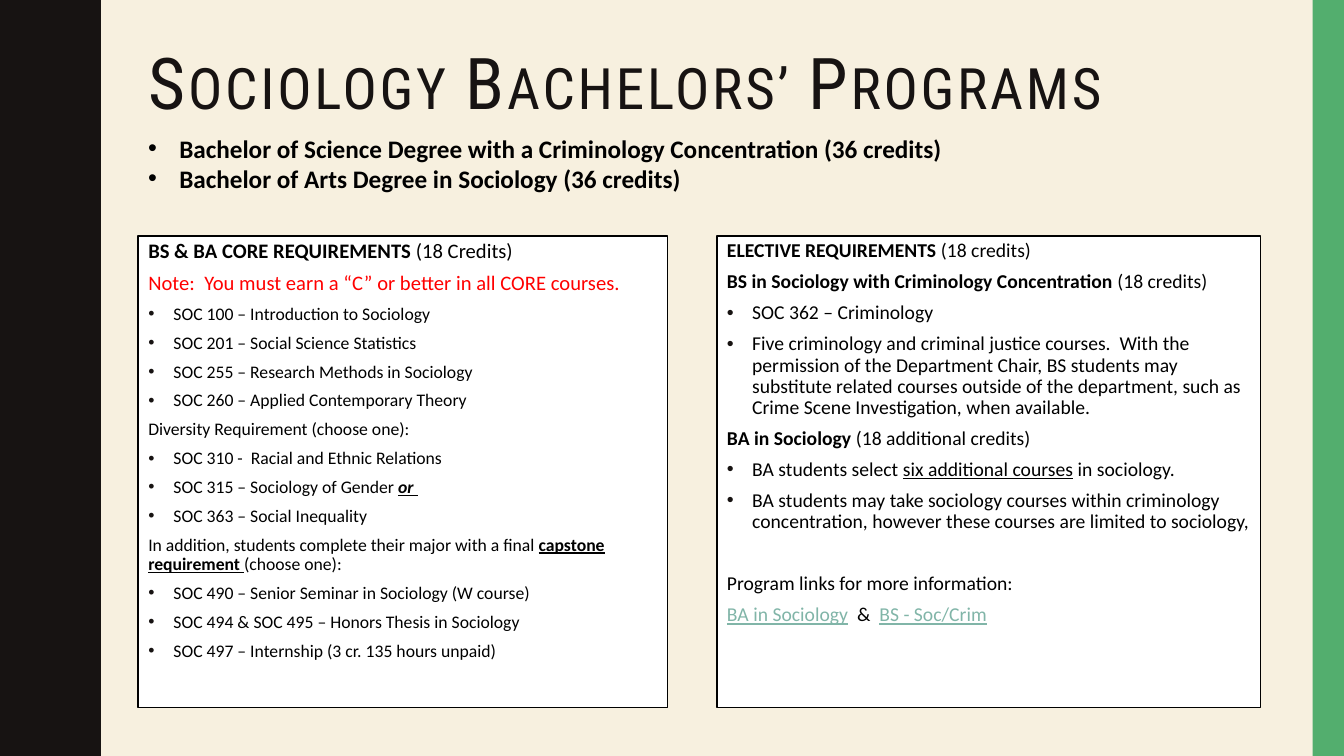
import pptx
import pptx.dml.color
import pptx.enum.text
import pptx.oxml.ns
import pptx.util
from lxml import etree

RGBColor = pptx.dml.color.RGBColor
CREAM = RGBColor(0xF7, 0xF0, 0xDF)
INK = RGBColor(0x17, 0x13, 0x12)
GREEN = RGBColor(0x53, 0xAE, 0x6E)
BLACK = RGBColor(0, 0, 0)
WHITE = RGBColor(0xFF, 0xFF, 0xFF)
RED = RGBColor(0xFF, 0, 0)
TEAL = RGBColor(0x81, 0xB5, 0xA8)

WIDTH, HEIGHT = pptx.util.Inches(13.33), pptx.util.Inches(7.5)

# Boxes as left, top, width, height in percent of the slide
TITLE_BOX = (10.28, 5.6, 83.5, 13.33)
DEGREES_BOX = (10.28, 16.93, 80.35, 9.47)
CORE_BOX = (10.28, 31.2, 39.38, 62.4)
ELECTIVE_BOX = (53.34, 31.2, 40.44, 62.4)
STRIPE_BOX = (97.67, 0, 2.33, 100)

# Half a wave in inches: x and y from trough to crest
HALF_WAVE = [(0.78, 0), (0.78, 0.07), (0.79, 0.14), (0.8, 0.2), (0.81, 0.25),
             (0.83, 0.29), (0.85, 0.33), (0.87, 0.38), (0.89, 0.42), (0.91, 0.46),
             (0.93, 0.5), (0.95, 0.55), (0.96, 0.61), (0.97, 0.68), (0.97, 0.75)]
WAVE_LENGTH, WAVE_COUNT = 1.5, 5

DEGREES = [
    "Bachelor of Science Degree with a Criminology Concentration (36 credits)",
    "Bachelor of Arts Degree in Sociology (36 credits)",
]

# Each paragraph: kind, then runs of (text, style); b bold, i italic, u underlined
CORE = [
    ("head", [("BS & BA CORE REQUIREMENTS ", "b"), ("(18 Credits)", "")]),
    ("note", [("Note:  You must earn a “C” or better in all CORE courses.", "")]),
    ("item", [("SOC 100 – Introduction to Sociology", "")]),
    ("item", [("SOC 201 – Social Science Statistics", "")]),
    ("item", [("SOC 255 – Research Methods in Sociology", "")]),
    ("item", [("SOC 260 – Applied Contemporary Theory", "")]),
    ("text", [("Diversity Requirement (choose one):", "")]),
    ("item", [("SOC 310 -  Racial and Ethnic Relations", "")]),
    ("item", [("SOC 315 – Sociology of Gender ", ""), ("or ", "biu")]),
    ("item", [("SOC 363 – Social Inequality", "")]),
    ("text", [("In addition, students complete their major with a final ", ""),
              ("capstone requirement ", "bu"), ("(choose one):", "")]),
    ("item", [("SOC 490 – Senior Seminar in Sociology (W course)", "")]),
    ("item", [("SOC 494 & SOC 495 – Honors Thesis in Sociology", "")]),
    ("item", [("SOC 497 – Internship (3 cr. 135 hours unpaid)", "")]),
]
ELECTIVES = [
    ("head", [("ELECTIVE REQUIREMENTS ", "b"), ("(18 credits)", "")]),
    ("head", [("BS in Sociology with Criminology Concentration ", "b"),
              ("(18 credits)", "")]),
    ("item", [("SOC 362 – Criminology", "")]),
    ("item", [("Five criminology and criminal justice courses.  With the permission "
               "of the Department Chair, BS students may substitute related courses "
               "outside of the department, such as Crime Scene Investigation, "
               "when available.", "")]),
    ("head", [("BA in Sociology ", "b"), ("(18 additional credits)", "")]),
    ("item", [("BA students select ", ""), ("six additional courses", "u"),
              (" in sociology.", "")]),
    ("item", [("BA students may take sociology courses within criminology "
               "concentration, however these courses are limited to sociology,", "")]),
    ("links", [("Program links for more information:", "")]),
    ("text", [("BA in Sociology", "link"), ("  &  ", ""), ("BS - Soc/Crim", "link")]),
]


def to_lengths(box):
    return [round(share * side / 100)
            for share, side in zip(box, (WIDTH, HEIGHT, WIDTH, HEIGHT))]


def place(shape, box):
    shape.left, shape.top, shape.width, shape.height = to_lengths(box)


def paint(shape, color):
    shape.shadow.inherit = False
    shape.fill.solid()
    shape.fill.fore_color.rgb = color
    shape.line.fill.background()


def set_font(font, size, color, name="Calibri"):
    font.name, font.size = name, pptx.util.Pt(size)
    font.color.rgb = color


def set_bullet(paragraph, indent, color=None):
    """Bullet with a hanging indent in inches; an indent of 0 means no bullet."""
    properties = paragraph._p.get_or_add_pPr()
    properties.set("marL", str(pptx.util.Inches(indent)))
    properties.set("indent", str(-pptx.util.Inches(indent)))
    qn = pptx.oxml.ns.qn
    if not indent:
        etree.SubElement(properties, qn("a:buNone"))
        return
    if color is not None:
        bullet_color = etree.SubElement(properties, qn("a:buClr"))
        etree.SubElement(bullet_color, qn("a:srgbClr")).set("val", str(color))
    etree.SubElement(properties, qn("a:buFont")).set("typeface", "Arial")
    etree.SubElement(properties, qn("a:buChar")).set("char", "•")


def next_paragraph(frame, index):
    return frame.add_paragraph() if index else frame.paragraphs[0]


def add_borders(slide):
    # Wavy band on the left
    crest_to_trough = [(x, WAVE_LENGTH - y) for x, y in HALF_WAVE[-2::-1]]
    edge = [(x, y + wave * WAVE_LENGTH) for wave in range(WAVE_COUNT)
            for x, y in HALF_WAVE + crest_to_trough]
    outline = slide.shapes.build_freeform(0, 0, scale=pptx.util.Inches(1))
    outline.add_line_segments(edge + [(0, WAVE_LENGTH * WAVE_COUNT)], close=True)
    paint(outline.convert_to_shape(), INK)
    # Green stripe on the right
    stripe = slide.shapes.add_shape(pptx.enum.shapes.MSO_SHAPE.RECTANGLE,
                                    *to_lengths(STRIPE_BOX))
    paint(stripe, GREEN)


def fill_title(title, box):
    place(title, box)
    frame = title.text_frame
    frame.auto_size = pptx.enum.text.MSO_AUTO_SIZE.NONE
    frame.vertical_anchor = pptx.enum.text.MSO_ANCHOR.TOP
    heading = frame.paragraphs[0]
    heading.alignment = pptx.enum.text.PP_ALIGN.LEFT
    heading.line_spacing = 0.9
    set_font(heading.font, 51, INK, "Roboto Condensed")
    run = heading.add_run()
    run.text = "Sociology Bachelors’ Programs"
    look = run._r.get_or_add_rPr()
    look.set("spc", "200")
    look.set("cap", "small")


def add_degrees(slide, box):
    frame = slide.shapes.add_textbox(*to_lengths(box)).text_frame
    frame.word_wrap = True
    for index, degree in enumerate(DEGREES):
        line = next_paragraph(frame, index)
        set_bullet(line, 0.31)
        line.text = degree
        set_font(line.font, 18, BLACK)
        line.font.bold = True


def fill_panel(panel, box, content, head_size, text_size):
    place(panel, box)
    paint(panel, WHITE)
    panel.line.color.rgb = BLACK
    panel.line.width = pptx.util.Pt(1)
    frame = panel.text_frame
    frame.auto_size = pptx.enum.text.MSO_AUTO_SIZE.NONE
    frame.vertical_anchor = pptx.enum.text.MSO_ANCHOR.TOP
    for index, (kind, runs) in enumerate(content):
        line = next_paragraph(frame, index)
        line.line_spacing = 0.9
        line.space_before = pptx.util.Pt(29.4 if kind == "links" else 7)
        set_bullet(line, 0.25 if kind == "item" else 0, INK)
        set_font(line.font, head_size if kind in ("head", "note") else text_size,
                 RED if kind == "note" else BLACK)
        for text, style in runs:
            run = line.add_run()
            run.text = text
            if style == "link":
                run.font.color.rgb = TEAL
                run.font.underline = True
            elif style:
                run.font.bold = "b" in style
                run.font.italic = "i" in style
                run.font.underline = "u" in style


def main():
    deck = pptx.Presentation()
    deck.slide_width, deck.slide_height = WIDTH, HEIGHT
    slide = deck.slides.add_slide(deck.slide_layouts.get_by_name("Two Content"))
    slide.background.fill.solid()
    slide.background.fill.fore_color.rgb = CREAM
    title, core, electives = slide.placeholders
    add_borders(slide)
    fill_title(title, TITLE_BOX)
    fill_panel(core, CORE_BOX, CORE, 14.7, 12.6)
    fill_panel(electives, ELECTIVE_BOX, ELECTIVES, 14, 14)
    add_degrees(slide, DEGREES_BOX)
    deck.save("out.pptx")


if __name__ == "__main__":
    main()
